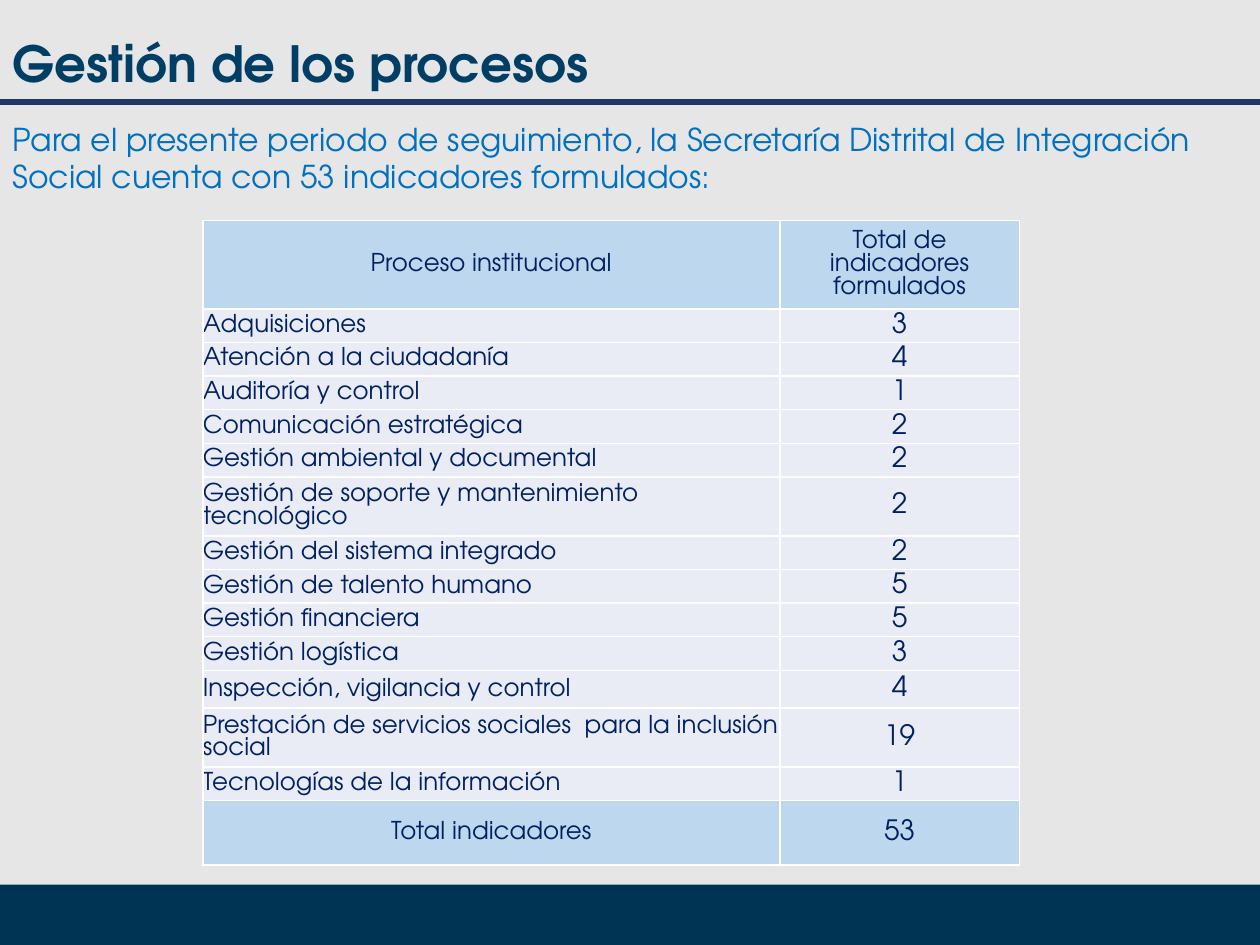
from dataclasses import dataclass

from lxml import etree
from pptx import Presentation
from pptx.dml.color import RGBColor
from pptx.enum.shapes import MSO_CONNECTOR, MSO_SHAPE
from pptx.enum.text import MSO_ANCHOR, MSO_AUTO_SIZE, PP_ALIGN
from pptx.oxml.ns import qn
from pptx.util import Inches, Pt

LEFT, CENTER = PP_ALIGN.LEFT, PP_ALIGN.CENTER
TOP, MIDDLE = MSO_ANCHOR.TOP, MSO_ANCHOR.MIDDLE
STRAIGHT = MSO_CONNECTOR.STRAIGHT
RECTANGLE = MSO_SHAPE.RECTANGLE
NO_AUTOFIT = MSO_AUTO_SIZE.NONE
TITLE_ONLY = 5


@dataclass(frozen=True)
class Theme:
    font: str = "TeX Gyre Adventor"
    background: str = "E7E6E6"
    band: str = "003454"
    rule: str = "203864"
    title: str = "003E65"
    intro: str = "0070C0"
    table_text: str = "002060"
    accent_fill: str = "BDD7EE"
    row_fill: str = "E9EBF5"
    border: str = "FFFFFF"
    title_size: float = 28.5
    intro_size: float = 18
    label_size: float = 14
    count_size: float = 16


THEME = Theme()

HEADER = ("Proceso institucional", "Total de indicadores formulados")
PROCESSES = [
    ("Adquisiciones", 3),
    ("Atención a la ciudadanía", 4),
    ("Auditoría y control", 1),
    ("Comunicación estratégica", 2),
    ("Gestión ambiental y documental", 2),
    ("Gestión de soporte y mantenimiento tecnológico", 2),
    ("Gestión del sistema integrado", 2),
    ("Gestión de talento humano", 5),
    ("Gestión financiera", 5),
    ("Gestión logística", 3),
    ("Inspección, vigilancia y control", 4),
    ("Prestación de servicios sociales  para la inclusión social", 19),
    ("Tecnologías de la información", 1),
]
TOTAL = ("Total indicadores", sum(count for _, count in PROCESSES))

COLUMN_WIDTHS = (4.58, 1.9)
HEADER_HEIGHT, ROW_HEIGHT, TOTAL_HEIGHT = 0.7, 0.26, 0.51
TALL_ROWS = {6: 0.46, 11: 0.3, 12: 0.46}


def rgb(color):
    return RGBColor.from_string(color)


def write(frame, text, *, size, color, bold=False, align=LEFT):
    frame.word_wrap = True
    paragraph = frame.paragraphs[0]
    paragraph.alignment = align
    run = paragraph.add_run()
    run.text = text
    run.font.name = THEME.font
    run.font.size = Pt(size)
    run.font.bold = bold
    run.font.color.rgb = rgb(color)


def add_band(slide, left, top, width, height):
    band = slide.shapes.add_shape(
        RECTANGLE, Inches(left), Inches(top), Inches(width), Inches(height))
    band.shadow.inherit = False
    band.fill.solid()
    band.fill.fore_color.rgb = rgb(THEME.band)
    band.line.fill.background()


def add_rule(slide, left, right, y):
    rule = slide.shapes.add_connector(
        STRAIGHT, Inches(left), Inches(y), Inches(right), Inches(y))
    rule.line.color.rgb = rgb(THEME.rule)
    rule.line.width = Pt(3)
    etree.SubElement(rule._element.spPr, qn("a:effectLst"))


def set_title(slide, text):
    title = slide.shapes.title
    title.left, title.top = Inches(0), Inches(0.24)
    title.width, title.height = Inches(6.47), Inches(0.51)
    title.text_frame.auto_size = NO_AUTOFIT
    title.text_frame.vertical_anchor = MIDDLE
    write(title.text_frame, text, size=THEME.title_size,
          color=THEME.title, bold=True)


def add_intro(slide, text):
    intro = slide.shapes.add_textbox(
        Inches(0), Inches(0.9), Inches(9.89), Inches(0.71))
    intro.text_frame.vertical_anchor = TOP
    write(intro.text_frame, text, size=THEME.intro_size, color=THEME.intro)


def set_borders(cell):
    properties = cell._tc.get_or_add_tcPr()
    for position, side in enumerate(("a:lnL", "a:lnR", "a:lnT", "a:lnB")):
        border = etree.Element(qn(side), w=str(Pt(1)))
        fill = etree.SubElement(border, qn("a:solidFill"))
        etree.SubElement(fill, qn("a:srgbClr"), val=THEME.border)
        properties.insert(position, border)


def fill_cell(cell, text, fill, **text_format):
    cell.margin_left = cell.margin_right = Inches(0)
    cell.margin_top = cell.margin_bottom = Inches(0)
    cell.vertical_anchor = MIDDLE
    cell.fill.solid()
    cell.fill.fore_color.rgb = rgb(fill)
    set_borders(cell)
    write(cell.text_frame, text, color=THEME.table_text, **text_format)


def add_indicator_table(slide, left, top):
    rows = [HEADER, *PROCESSES, TOTAL]
    last = len(rows) - 1
    heights = [TALL_ROWS.get(index, ROW_HEIGHT) for index in range(len(rows))]
    heights[0], heights[last] = HEADER_HEIGHT, TOTAL_HEIGHT

    table = slide.shapes.add_table(
        len(rows), len(COLUMN_WIDTHS), Inches(left), Inches(top),
        Inches(sum(COLUMN_WIDTHS)), Inches(sum(heights))).table
    for column, width in zip(table.columns, COLUMN_WIDTHS):
        column.width = Inches(width)

    for index, (label, count) in enumerate(rows):
        table.rows[index].height = Inches(heights[index])
        accented = index in (0, last)
        fill = THEME.accent_fill if accented else THEME.row_fill
        fill_cell(table.cell(index, 0), label, fill, size=THEME.label_size,
                  align=CENTER if accented else LEFT)
        fill_cell(table.cell(index, 1), str(count), fill, align=CENTER,
                  size=THEME.count_size if index else THEME.label_size)


def main():
    deck = Presentation()
    deck.slide_width, deck.slide_height = Inches(10), Inches(7.5)
    slide = deck.slides.add_slide(deck.slide_layouts[TITLE_ONLY])

    # Background, footer band and title rule
    slide.background.fill.solid()
    slide.background.fill.fore_color.rgb = rgb(THEME.background)
    add_band(slide, 0, 7.02, 10, 0.48)
    add_rule(slide, 0, 10, 0.81)

    # Heading and introduction
    set_title(slide, "Gestión de los procesos")
    add_intro(slide, "Para el presente periodo de seguimiento, la Secretaría "
                     "Distrital de Integración Social cuenta con "
                     f"{TOTAL[1]} indicadores formulados:")

    # Indicators by process
    add_indicator_table(slide, 1.61, 1.75)

    deck.save("out.pptx")


if __name__ == "__main__":
    main()
